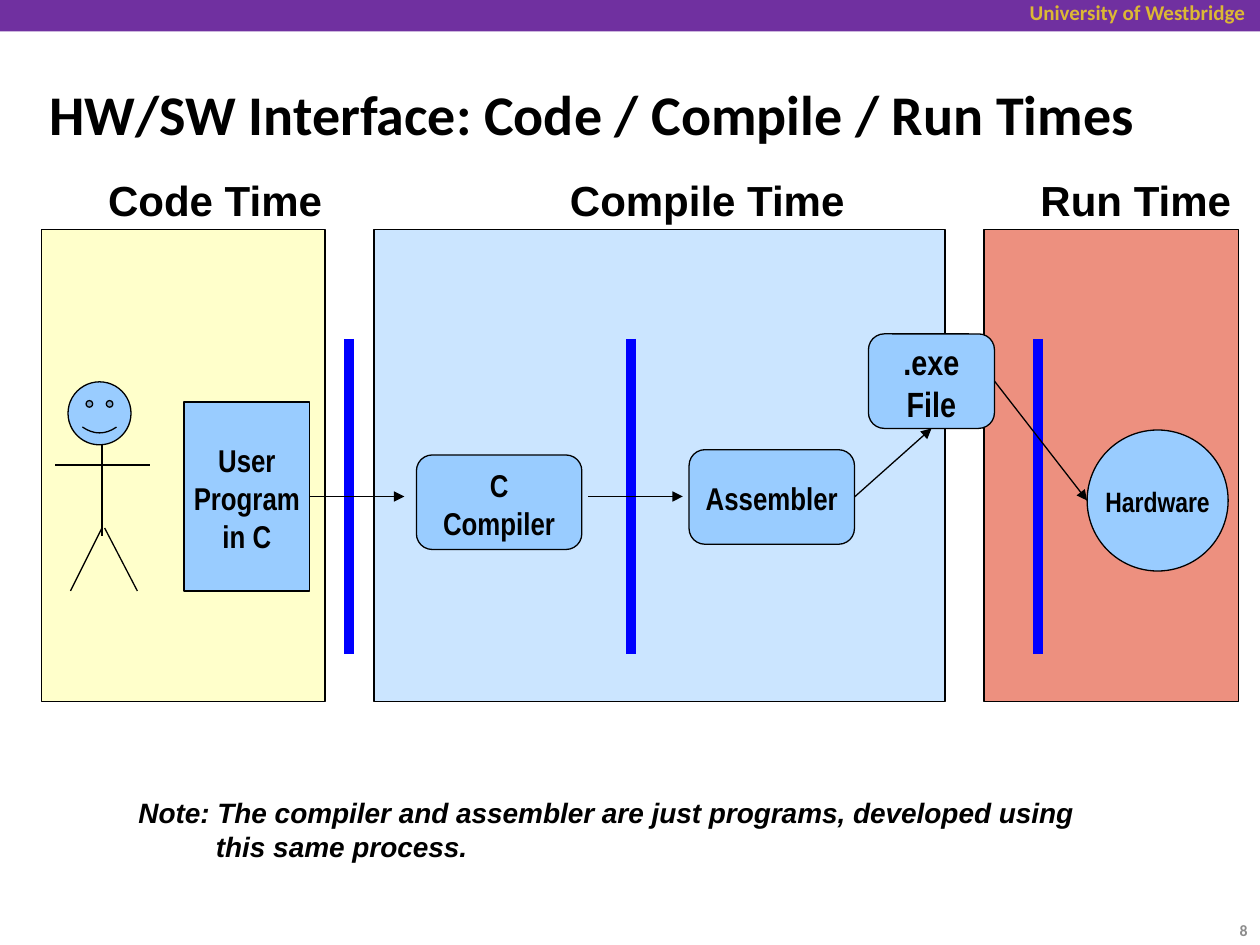
"""Build the code, compile and run time slide."""
from lxml import etree
from pptx import Presentation
from pptx.dml.color import RGBColor
from pptx.enum.shapes import MSO_CONNECTOR, MSO_SHAPE
from pptx.enum.text import MSO_ANCHOR, PP_ALIGN
from pptx.oxml.ns import qn
from pptx.util import Pt

RECT, ROUND = MSO_SHAPE.RECTANGLE, MSO_SHAPE.ROUNDED_RECTANGLE
OVAL, SMILEY = MSO_SHAPE.OVAL, MSO_SHAPE.SMILEY_FACE
STRAIGHT = MSO_CONNECTOR.STRAIGHT
LEFT, CENTER, RIGHT = PP_ALIGN.LEFT, PP_ALIGN.CENTER, PP_ALIGN.RIGHT
TOP, MIDDLE = MSO_ANCHOR.TOP, MSO_ANCHOR.MIDDLE
BOTTOM_SIDE, RIGHT_SIDE = 2, 3

BLACK = RGBColor(0x00, 0x00, 0x00)
PURPLE = RGBColor(0x70, 0x30, 0xA0)
GOLD = RGBColor(0xDC, 0xB8, 0x34)
GRAY = RGBColor(0x8C, 0x8C, 0x8C)
BLUE = RGBColor(0x00, 0x00, 0xFF)
SKY = RGBColor(0x99, 0xCC, 0xFF)
YELLOW = RGBColor(0xFF, 0xFF, 0x99)
RED = RGBColor(0xDC, 0x23, 0x00)

THIN, THICK = 0.75, 5.75
INSETS = (7.2, 5, 7.2, 3.6)
EVEN_INSETS = (7.2, 3.6, 7.2, 3.6)
PANEL_TOP, PANEL_HEIGHT = 131, 270
PANELS = [(562.3, 145.5, RED), (213.8, 326.2, SKY), (23.8, 162, YELLOW)]
HEADINGS = [
    ("Code Time", 54.7, 140),
    ("Compile Time", 318.6, 175),
    ("Run Time", 587.5, 127),
]
BARRIER_TOP, BARRIER_BOTTOM = 193.7, 373.7
BARRIERS = [199.4, 360.7, 593.3]
LIMBS = [
    (58.3, 247.7, 58.3, 306),
    (40.3, 337.7, 58.3, 301.7),
    (78.5, 337.7, 59.8, 301.7),
    (31.7, 265.7, 85.7, 265.7),
]
FACE = (38.9, 218.2, 36, 36)
STEPS = {
    "User\nProgram\nin C": (RECT, (105.1, 229.7, 72, 108), 18),
    "C\nCompiler": (ROUND, (238, 260, 94.5, 54), 18),
    "Assembler": (ROUND, (393.8, 257, 94.5, 54), 18),
    ".exe\nFile": (ROUND, (496.3, 190.8, 72, 54), 20),
    "Hardware": (OVAL, (621.2, 245.7, 80.6, 80.6), 16),
}
ARROW_Y = 283.7
NOTE = ("Note: The compiler and assembler are just programs, "
        "developed using this same process.")
NOTE_INDENT = 44.3


def write(frame, text, font="Arial", size=18, color=BLACK, bold=True,
          italic=False, align=LEFT, anchor=TOP, wrap=False, insets=INSETS,
          hanging=0):
    frame.word_wrap = wrap
    frame.vertical_anchor = anchor
    (frame.margin_left, frame.margin_top,
     frame.margin_right, frame.margin_bottom) = map(Pt, insets)
    frame.text = text
    for paragraph in frame.paragraphs:
        paragraph.alignment = align
        if hanging:
            properties = paragraph._p.get_or_add_pPr()
            properties.set("marL", str(Pt(hanging)))
            properties.set("indent", str(-Pt(hanging)))
        for run in paragraph.runs:
            run.font.name, run.font.size = font, Pt(size)
            run.font.bold, run.font.italic = bold, italic
            run.font.color.rgb = color


def add_label(slide, text, box, **style):
    label = slide.shapes.add_textbox(*map(Pt, box))
    write(label.text_frame, text, **style)


def add_block(slide, kind, box, fill, outlined=True, opacity=100):
    block = slide.shapes.add_shape(kind, *map(Pt, box))
    block.shadow.inherit = False
    block.fill.solid()
    block.fill.fore_color.rgb = fill
    if opacity < 100:
        color = block._element.spPr.find(qn("a:solidFill"))[0]
        etree.SubElement(color, qn("a:alpha"), val=str(opacity * 1000))
    if outlined:
        block.line.color.rgb = BLACK
        block.line.width = Pt(THIN)
    else:
        block.line.fill.background()
    return block


def add_line(slide, ends, color=BLACK, width=THIN, arrow=False):
    line = slide.shapes.add_connector(STRAIGHT, *map(Pt, ends))
    line.line.color.rgb = color
    line.line.width = Pt(width)
    if arrow:
        etree.SubElement(line.line._get_or_add_ln(), qn("a:tailEnd"),
                         type="triangle")
    etree.SubElement(line._element.spPr, qn("a:effectLst"))
    return line


def main():
    deck = Presentation()
    deck.slide_width, deck.slide_height = Pt(720), Pt(540)
    slide = deck.slides.add_slide(deck.slide_layouts[6])

    add_block(slide, RECT, (0, 0, 720, 18), PURPLE, outlined=False)
    add_label(slide, "University of Westbridge", (527.8, -3.6, 190.8, 21.6),
              font="Calibri", size=12, color=GOLD, align=RIGHT, wrap=True,
              insets=EVEN_INSETS)
    for left, width, color in PANELS:
        add_block(slide, RECT, (left, PANEL_TOP, width, PANEL_HEIGHT), color,
                  opacity=50)
    add_label(slide, "HW/SW Interface: Code / Compile / Run Times",
              (28.1, 38.2, 661.7, 52.6), font="Calibri", size=32,
              anchor=MIDDLE, wrap=True, insets=(0, 0.7, 0, 0))

    for x in BARRIERS:
        add_line(slide, (x, BARRIER_TOP, x, BARRIER_BOTTOM), BLUE, THICK)
    for limb in LIMBS:
        add_line(slide, limb)
    face = add_block(slide, SMILEY, FACE, SKY)
    face.adjustments[0] = 0.047

    blocks = []
    for text, (kind, box, size) in STEPS.items():
        block = add_block(slide, kind, box, SKY)
        write(block.text_frame, text, font="Arial Narrow", size=size,
              align=CENTER, anchor=MIDDLE)
        blocks.append(block)
    program, _, assembler, executable, _ = blocks

    to_compiler = add_line(slide, (177.1, ARROW_Y, 231.1, ARROW_Y), arrow=True)
    to_compiler.begin_connect(program, RIGHT_SIDE)
    add_line(slide, (336.2, ARROW_Y, 390.2, ARROW_Y), arrow=True)
    to_executable = add_line(slide, (488.3, 284, 532.3, 244.8), arrow=True)
    to_executable.begin_connect(assembler, RIGHT_SIDE)
    to_executable.end_connect(executable, BOTTOM_SIDE)
    to_hardware = add_line(slide, (568.3, 217.8, 621.2, 286), arrow=True)
    to_hardware.begin_connect(executable, RIGHT_SIDE)

    for text, left, width in HEADINGS:
        add_label(slide, text, (left, 95, width, 27.4), size=24)
    add_label(slide, NOTE, (72, 449.8, 569, 47.5), size=16, italic=True,
              wrap=True, hanging=NOTE_INDENT)
    add_label(slide, "8", (671.8, 517, 48.2, 28.8), font="Calibri", size=9,
              color=GRAY, align=RIGHT, anchor=MIDDLE, wrap=True,
              insets=EVEN_INSETS)
    deck.save("out.pptx")


if __name__ == "__main__":
    main()
